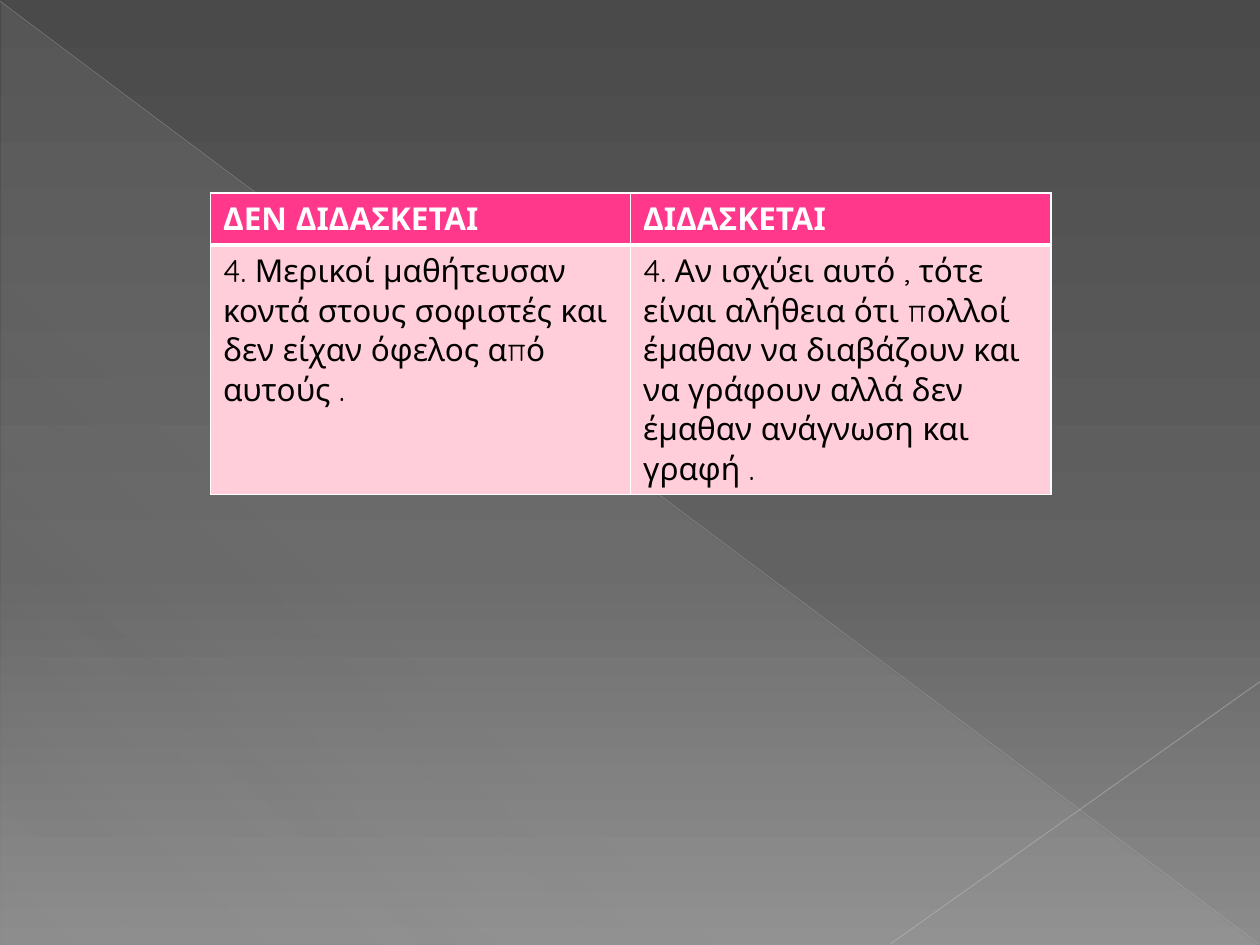
from lxml import etree
from pptx import Presentation
from pptx import util as u
from pptx.dml.color import RGBColor
from pptx.enum import shapes
from pptx.oxml import ns

WHITE = RGBColor(0xFF, 0xFF, 0xFF)
BLACK = RGBColor(0x00, 0x00, 0x00)
PINK = RGBColor(0xFF, 0x38, 0x8C)
PALE_PINK = RGBColor(0xFF, 0xCE, 0xDA)
DARK_GREY = RGBColor(0x4A, 0x4A, 0x4A)
MID_GREY = RGBColor(0x62, 0x62, 0x62)
LIGHT_GREY = RGBColor(0x8C, 0x8C, 0x8C)
SHEEN = RGBColor(0xD2, 0xD2, 0xD2)
LONG_LINE = RGBColor(0xBF, 0xBF, 0xBF)
SHORT_LINE = RGBColor(0xC6, 0xC6, 0xC6)


def add_color(parent, color, opacity=100):
    element = etree.SubElement(parent, ns.qn("a:srgbClr"), val=str(color))
    if opacity < 100:
        etree.SubElement(element, ns.qn("a:alpha"), val=str(opacity * 1000))


def set_gradient(fill, owner, angle, stops):
    """Fill with (position, colour, opacity) stops at a clockwise angle."""
    fill.gradient()
    fill.gradient_angle = 360 - angle
    stop_list = next(owner.iter(ns.qn("a:gsLst")))
    for old_stop in list(stop_list):
        stop_list.remove(old_stop)
    for position, color, opacity in stops:
        stop = etree.SubElement(stop_list, ns.qn("a:gs"), pos=str(position * 1000))
        add_color(stop, color, opacity)


presentation = Presentation()
presentation.slide_width = u.Inches(10)
presentation.slide_height = u.Inches(7.5)
slide = presentation.slides.add_slide(presentation.slide_layouts[6])

# Background
set_gradient(slide.background.fill, slide.element, 90,
             [(0, DARK_GREY, 100), (60, MID_GREY, 100), (100, LIGHT_GREY, 100)])

# Translucent triangle
triangle = slide.shapes.add_shape(
    shapes.MSO_SHAPE.RIGHT_TRIANGLE,
    u.Inches(0.01), u.Inches(0.02), u.Inches(9.98), u.Inches(7.48))
triangle.shadow.inherit = False
triangle.line.fill.background()
set_gradient(triangle.fill, triangle.element, 133,
             [(0, SHEEN, 10), (70, SHEEN, 8), (100, SHEEN, 1)])

# Diagonal lines
for x1, y1, x2, y2, color, width, opacity in [
    (0, 0.01, 9.99, 7.49, LONG_LINE, 0.39, 35),
    (10, 5.41, 7.07, 7.49, SHORT_LINE, 0.47, 45),
]:
    line = slide.shapes.add_connector(
        shapes.MSO_CONNECTOR.STRAIGHT,
        u.Inches(x1), u.Inches(y1), u.Inches(x2), u.Inches(y2))
    line.line.width = u.Pt(width)
    line.line.color.rgb = color
    line_color = next(line.element.iter(ns.qn("a:srgbClr")))
    etree.SubElement(line_color, ns.qn("a:alpha"), val=str(opacity * 1000))
    etree.SubElement(line.element.spPr, ns.qn("a:effectLst"))

# Table
rows = [
    ("ΔΕΝ ΔΙΔΑΣΚΕΤΑΙ", "ΔΙΔΑΣΚΕΤΑΙ"),
    ("4. Μερικοί μαθήτευσαν κοντά στους σοφιστές και δεν είχαν όφελος από αυτούς .",
     "4. Αν ισχύει αυτό , τότε είναι αλήθεια ότι πολλοί έμαθαν να διαβάζουν και "
     "να γράφουν αλλά δεν έμαθαν ανάγνωση και γραφή ."),
]
row_styles = [(0.41, PINK, WHITE, True), (1.9, PALE_PINK, BLACK, False)]
table = slide.shapes.add_table(
    2, 2, u.Inches(1.67), u.Inches(1.53), u.Inches(6.67), u.Inches(2.31)).table

for row_index, (texts, style) in enumerate(zip(rows, row_styles)):
    height, fill_color, text_color, is_header = style
    table.rows[row_index].height = u.Inches(height)
    for column_index, content in enumerate(texts):
        cell = table.cell(row_index, column_index)
        cell.text = content
        font = cell.text_frame.paragraphs[0].font
        font.name = "Quicksand"
        font.size = u.Pt(18)
        font.bold = is_header
        font.color.rgb = text_color

        # Borders come before the fill, with a thick rule under the header
        properties = cell._tc.get_or_add_tcPr()
        top, bottom = (1, 3) if is_header else (3, 1)
        for side, width in (("L", 1), ("R", 1), ("T", top), ("B", bottom)):
            border = etree.SubElement(
                properties, ns.qn(f"a:ln{side}"), w=str(u.Pt(width)))
            add_color(etree.SubElement(border, ns.qn("a:solidFill")), WHITE)
        cell.fill.solid()
        cell.fill.fore_color.rgb = fill_color

presentation.save("out.pptx")
